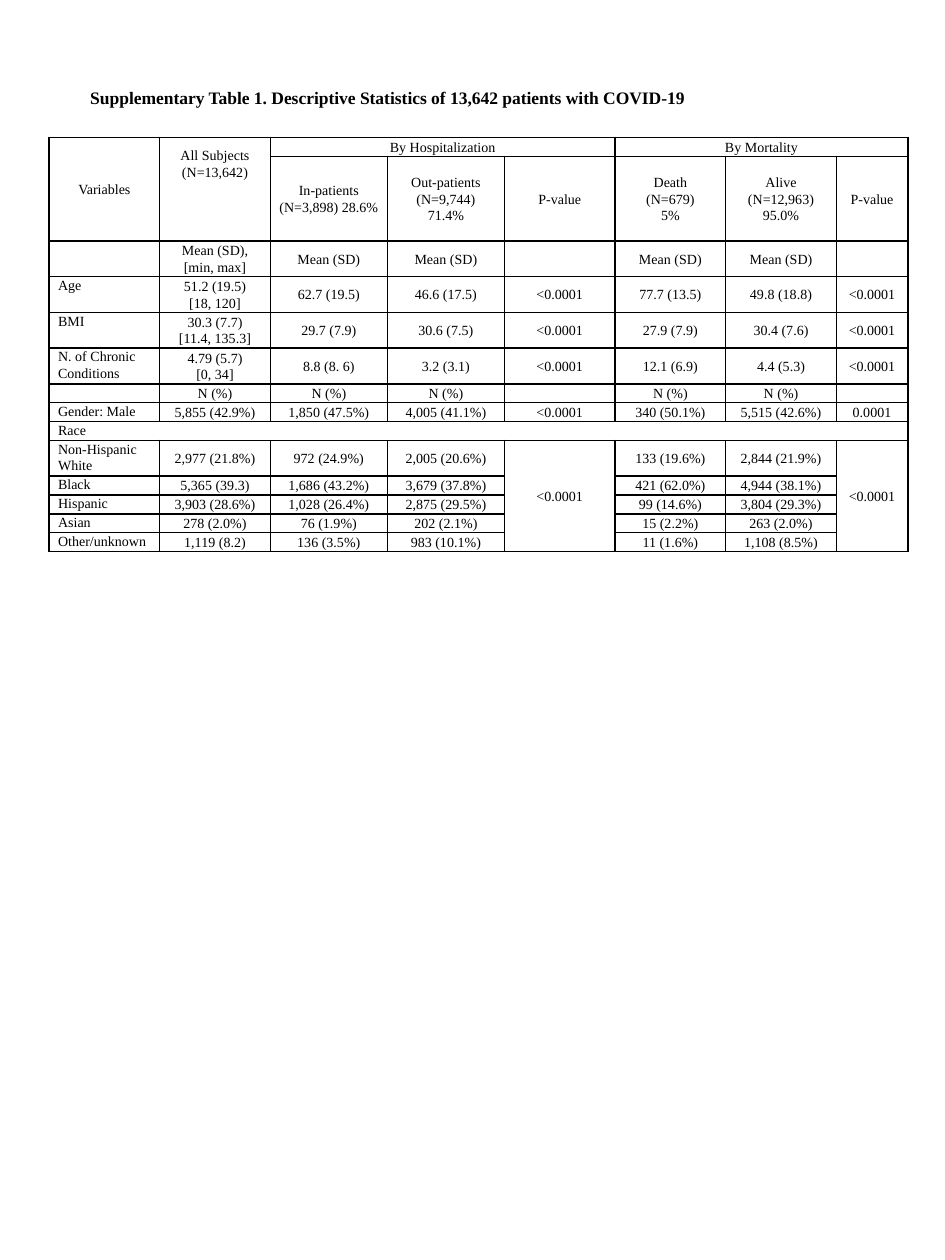
from typing import NamedTuple

from lxml.etree import SubElement
from pptx import Presentation
from pptx.dml.color import RGBColor
from pptx.enum.text import MSO_ANCHOR, MSO_AUTO_SIZE, PP_ALIGN
from pptx.oxml.ns import qn
from pptx.table import Table, _Cell
from pptx.text.text import TextFrame
from pptx.util import Cm, Pt

FONT = "Times New Roman"
BLACK = "000000"
BODY_SIZE = 8
SHORT, DOUBLE, HEADING = 0.38, 0.72, 1.66
COLUMN_WIDTHS = [2.23, 2.23, 2.36, 2.36, 2.23, 2.23, 2.23, 1.44]


class Row(NamedTuple):
    height: float
    texts: tuple[str, ...]


class Span(NamedTuple):
    top: int
    left: int
    bottom: int
    right: int


ROWS = [
    Row(SHORT, ("Variables", "All Subjects\n(N=13,642)", "By Hospitalization", "", "",
                "By Mortality", "", "")),
    Row(HEADING, ("", "", "In-patients\n(N=3,898) 28.6%", "Out-patients\n(N=9,744)\n71.4%", "P-value",
                  "Death\n(N=679)\n5%", "Alive\n(N=12,963)\n95.0%", "P-value")),
    Row(DOUBLE, ("", "Mean (SD), [min, max]", "Mean (SD)", "Mean (SD)", "", "Mean (SD)", "Mean (SD)", "")),
    Row(DOUBLE, ("Age", "51.2 (19.5)\n[18, 120]", "62.7 (19.5)", "46.6 (17.5)", "<0.0001",
                 "77.7 (13.5)", "49.8 (18.8)", "<0.0001")),
    Row(DOUBLE, ("BMI", "30.3 (7.7)\n[11.4, 135.3]", "29.7 (7.9)", "30.6 (7.5)", "<0.0001",
                 "27.9 (7.9)", "30.4 (7.6)", "<0.0001")),
    Row(DOUBLE, ("N. of Chronic Conditions", "4.79 (5.7)\n[0, 34]", "8.8 (8. 6)", "3.2 (3.1)", "<0.0001",
                 "12.1 (6.9)", "4.4 (5.3)", "<0.0001")),
    Row(SHORT, ("", "N (%)", "N (%)", "N (%)", "", "N (%)", "N (%)", "")),
    Row(SHORT, ("Gender: Male", "5,855 (42.9%)", "1,850 (47.5%)", "4,005 (41.1%)", "<0.0001",
                "340 (50.1%)", "5,515 (42.6%)", "0.0001")),
    Row(SHORT, ("Race", "", "", "", "", "", "", "")),
    Row(DOUBLE, ("Non-Hispanic White", "2,977 (21.8%)", "972 (24.9%)", "2,005 (20.6%)", "<0.0001",
                 "133 (19.6%)", "2,844 (21.9%)", "<0.0001")),
    Row(SHORT, ("Black", "5,365 (39.3)", "1,686 (43.2%)", "3,679 (37.8%)", "",
                "421 (62.0%)", "4,944 (38.1%)", "")),
    Row(SHORT, ("Hispanic", "3,903 (28.6%)", "1,028 (26.4%)", "2,875 (29.5%)", "",
                "99 (14.6%)", "3,804 (29.3%)", "")),
    Row(SHORT, ("Asian", "278 (2.0%)", "76 (1.9%)", "202 (2.1%)", "",
                "15 (2.2%)", "263 (2.0%)", "")),
    Row(SHORT, ("Other/unknown", "1,119 (8.2)", "136 (3.5%)", "983 (10.1%)", "",
                "11 (1.6%)", "1,108 (8.5%)", "")),
]

SPANS = [
    Span(0, 0, 1, 0),
    Span(0, 1, 1, 1),
    Span(0, 2, 0, 4),
    Span(0, 5, 0, 7),
    Span(8, 0, 8, 7),
    Span(9, 4, 13, 4),
    Span(9, 7, 13, 7),
]


def color(value: str) -> RGBColor:
    return RGBColor.from_string(value)


def write_text(frame: TextFrame, text: str, *, size: float = BODY_SIZE, bold: bool = False,
               alignment: PP_ALIGN = PP_ALIGN.LEFT, line_spacing: float = 1.0) -> None:
    for index, line in enumerate(text.split("\n")):
        paragraph = frame.add_paragraph() if index else frame.paragraphs[0]
        paragraph.alignment = alignment
        paragraph.line_spacing = line_spacing
        if not line:
            SubElement(paragraph._p, qn("a:endParaRPr"), sz=str(int(size * 100)))
            continue
        run = paragraph.add_run()
        run.text = line
        run.font.name = FONT
        run.font.size = Pt(size)
        run.font.bold = bold
        run.font.color.rgb = color(BLACK)


def draw_borders(cell: _Cell) -> None:
    properties = cell._tc.get_or_add_tcPr()
    for edge in ("lnL", "lnR", "lnT", "lnB"):
        line = SubElement(properties, qn(f"a:{edge}"), w=str(Pt(1)))
        fill = SubElement(line, qn("a:solidFill"))
        SubElement(fill, qn("a:srgbClr"), val=BLACK)


def fill_cell(cell: _Cell, text: str, is_label: bool) -> None:
    cell.margin_left = cell.margin_right = Cm(0.18)
    cell.margin_top = cell.margin_bottom = Cm(0)
    cell.vertical_anchor = MSO_ANCHOR.TOP if is_label else MSO_ANCHOR.MIDDLE
    draw_borders(cell)
    cell.fill.background()
    write_text(cell.text_frame, text, line_spacing=1.07,
               alignment=PP_ALIGN.LEFT if is_label else PP_ALIGN.CENTER)


def fill_table(table: Table) -> None:
    table.first_row = False
    table.horz_banding = False
    for column, width in zip(table.columns, COLUMN_WIDTHS):
        column.width = Cm(width)
    for row_index, row in enumerate(ROWS):
        table.rows[row_index].height = Cm(row.height)
        for column_index, text in enumerate(row.texts):
            is_label = column_index == 0 and row_index > 0
            fill_cell(table.cell(row_index, column_index), text, is_label)
    for span in SPANS:
        table.cell(span.top, span.left).merge(table.cell(span.bottom, span.right))
    table.cell(0, 1).margin_bottom = Cm(1.04)


def main() -> None:
    presentation = Presentation()
    presentation.slide_width = Cm(19.05)
    presentation.slide_height = Cm(25.4)
    slide = presentation.slides.add_slide(presentation.slide_layouts[6])

    table_shape = slide.shapes.add_table(
        len(ROWS), len(COLUMN_WIDTHS), Cm(0.99), Cm(2.77),
        Cm(sum(COLUMN_WIDTHS)), Cm(sum(row.height for row in ROWS)))
    fill_table(table_shape.table)

    title = slide.shapes.add_textbox(Cm(1.57), Cm(1.63), Cm(15.6), Cm(0.69)).text_frame
    title.word_wrap = True
    title.auto_size = MSO_AUTO_SIZE.SHAPE_TO_FIT_TEXT
    title.vertical_anchor = MSO_ANCHOR.MIDDLE
    write_text(title, "Supplementary Table 1. Descriptive Statistics of 13,642 patients with COVID-19",
               size=10, bold=True)

    presentation.save("out.pptx")


if __name__ == "__main__":
    main()
